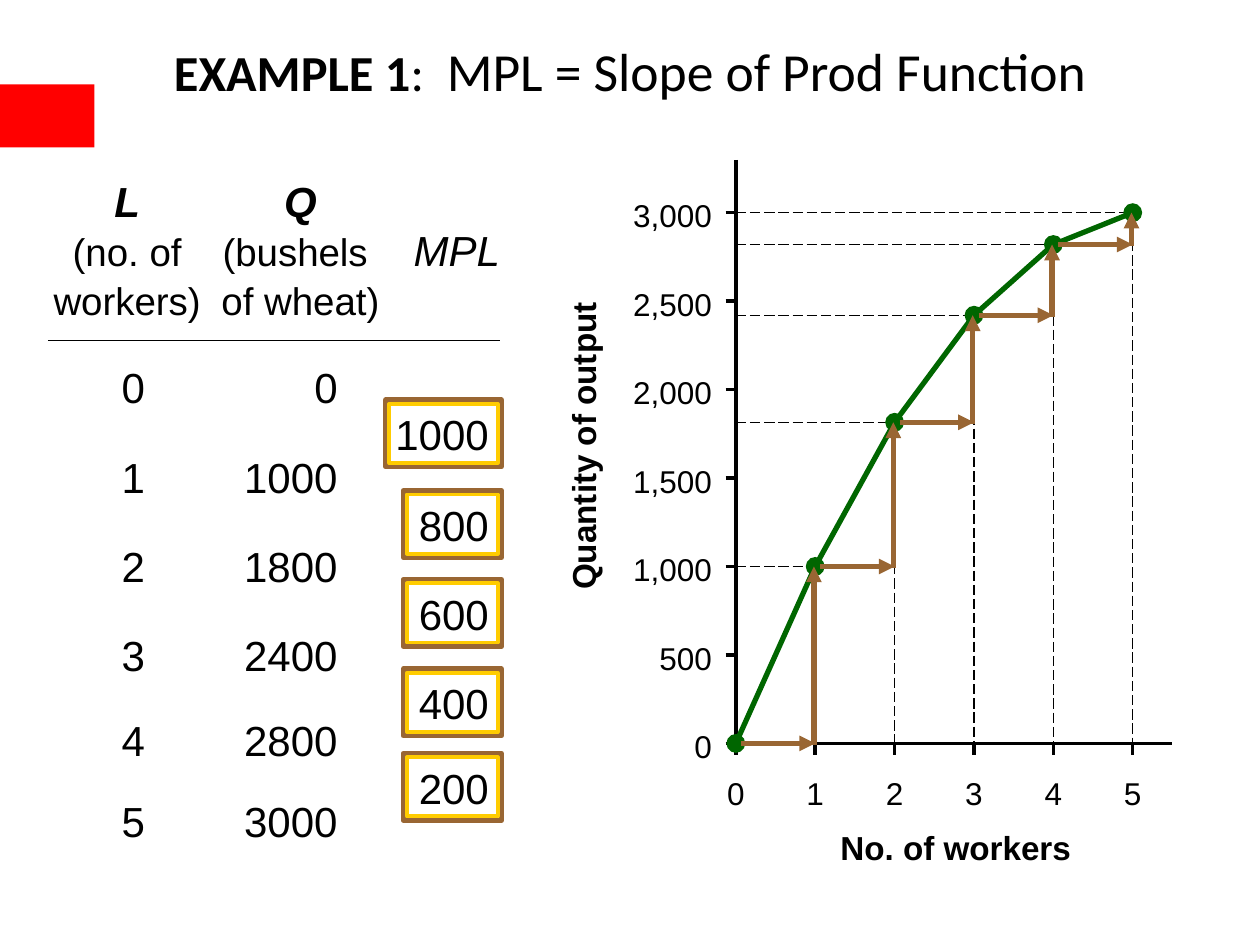
import dataclasses
import itertools

import lxml.etree
import pptx
import pptx.dml.color
import pptx.enum.dml
import pptx.enum.shapes
import pptx.enum.text
import pptx.oxml.ns
import pptx.slide
import pptx.util

BLACK = pptx.dml.color.RGBColor(0x00, 0x00, 0x00)
RED = pptx.dml.color.RGBColor(0xFF, 0x00, 0x00)
GREEN = pptx.dml.color.RGBColor(0x00, 0x66, 0x00)
BROWN = pptx.dml.color.RGBColor(0x99, 0x66, 0x33)
GOLD = pptx.dml.color.RGBColor(0xFF, 0xCC, 0x00)
ALIGN = pptx.enum.text.PP_ALIGN
SHAPE = pptx.enum.shapes.MSO_SHAPE

COLUMNS, ROWS = 100, 75
WORKERS = range(6)
OUTPUT = [0, 1000, 1800, 2400, 2800, 3000]
PLOTTED = [0, 1000, 1815, 2420, 2820, 3000]
ROW_EDGES = [26.8, 34.3, 41.2, 48.4, 55.4, 61.8, 68.2]
MPL_DROP = 3.8
AXIS_X, AXIS_Y = 58.4, 59
WORKER_STEP, OUTPUT_STEP = 6.3, 7.02


@dataclasses.dataclass
class Canvas:
    page: pptx.slide.Slide
    column: float
    row: float
    font_name: str = "Arial"

    def place(self, left, top, width, height):
        return [int(value * unit) for value, unit in
                zip((left, top, width, height), (self.column, self.row) * 2)]

    def fill_text(self, box, spans, align, margins=(0, 0, 0, 0), spacing=1.0):
        frame = box.text_frame
        sides = ("margin_left", "margin_top", "margin_right", "margin_bottom")
        layout = {
            "word_wrap": True,
            "auto_size": pptx.enum.text.MSO_AUTO_SIZE.NONE,
            "vertical_anchor": pptx.enum.text.MSO_ANCHOR.MIDDLE,
            **dict(zip(sides, map(pptx.util.Inches, margins))),
        }
        for name, value in layout.items():
            setattr(frame, name, value)
        para = frame.paragraphs[0]
        para.alignment = align
        para.line_spacing = spacing
        for text, size, formats in spans:
            for index, part in enumerate(text.split("\n")):
                if index:
                    para.add_line_break()
                if part:
                    span = para.add_run()
                    span.text = part
                    style = {"name": self.font_name, "size": pptx.util.Pt(size),
                             "bold": False, "italic": False, **formats}
                    for name, value in style.items():
                        setattr(span.font, name, value)
                    span.font.color.rgb = BLACK

    def title(self, area, spans):
        box = self.page.shapes.title
        box.left, box.top, box.width, box.height = self.place(*area)
        self.fill_text(box, spans, ALIGN.CENTER, (0.1, 0.05, 0.1, 0.05))

    def text(self, area, spans, align=ALIGN.CENTER, rotation=0, **layout):
        box = self.page.shapes.add_textbox(*self.place(*area))
        box.rotation = rotation
        self.fill_text(box, spans, align, **layout)

    def shape(self, kind, area, fill=None, line=None, weight=1):
        shape = self.page.shapes.add_shape(kind, *self.place(*area))
        shape.shadow.inherit = False
        if fill is None:
            shape.fill.background()
        else:
            shape.fill.solid()
            shape.fill.fore_color.rgb = fill
        if line is None:
            shape.line.fill.background()
        else:
            shape.line.color.rgb = line
            shape.line.width = pptx.util.Pt(weight)

    def line(self, start, end, color=BLACK, weight=0.75, dashed=False, arrow=False):
        line = self.page.shapes.add_connector(
            pptx.enum.shapes.MSO_CONNECTOR.STRAIGHT, *self.place(*start, *end))
        line.line.color.rgb = color
        line.line.width = pptx.util.Pt(weight)
        if dashed:
            line.line.dash_style = pptx.enum.dml.MSO_LINE.LONG_DASH
        qn = pptx.oxml.ns.qn
        properties = line.element.spPr
        if arrow:
            lxml.etree.SubElement(properties.find(qn("a:ln")), qn("a:tailEnd"), type="triangle")
        lxml.etree.SubElement(properties, qn("a:effectLst"))

    def dot(self, x, y):
        self.shape(SHAPE.OVAL, (x - 0.75, y - 0.75, 1.5, 1.5), fill=GREEN)


def worker_x(workers):
    return AXIS_X + WORKER_STEP * workers


def output_y(output):
    return AXIS_Y - OUTPUT_STEP * output / 500


def draw_axes(canvas):
    canvas.line((AXIS_X, 12.7), (AXIS_X, AXIS_Y), weight=2)
    canvas.line((AXIS_X, AXIS_Y), (93, AXIS_Y), weight=2)
    for output in range(0, 3001, 500):
        y = output_y(output)
        canvas.line((AXIS_X - 0.8, y), (AXIS_X, y), weight=2)
        canvas.text((48.5, y - 1.3, 8, 3), [(f"{output:,}", 18, {})], ALIGN.RIGHT)
    for workers in WORKERS:
        x = worker_x(workers)
        canvas.line((x, AXIS_Y + 0.9), (x, AXIS_Y), weight=2)
        canvas.text((x - 2, 61.4, 4, 3), [(str(workers), 18, {})])
    canvas.text((65.6, 65.6, 20.5, 3.2), [("No. of workers", 19, {"bold": True})])
    canvas.text((33.75, 33.8, 25, 3.2), [("Quantity of output", 19, {"bold": True})], rotation=270)


def draw_curve(canvas, points):
    for x, y in points[1:]:
        canvas.line((AXIS_X, y), (x, y), dashed=True)
        canvas.line((x, y), (x, AXIS_Y), dashed=True)
        canvas.dot(x, y)
    for start, end in itertools.pairwise(points):
        canvas.line(start, end, GREEN, 3)
    canvas.dot(*points[0])


def draw_steps(canvas, points):
    for (x, y), (next_x, next_y) in itertools.pairwise(points):
        canvas.line((x + 0.4, y), (next_x, y), BROWN, 3, arrow=True)
        canvas.line((next_x - 0.1, y + 0.1), (next_x - 0.1, next_y), BROWN, 3, arrow=True)


def draw_table(canvas):
    symbol = {"bold": True, "italic": True}
    headings = [
        (3.6, 13, [("L\n", 24, symbol), ("(no. of workers)", 22, {})]),
        (16.6, 14.5, [("Q\n", 24, symbol), ("(bushels \nof wheat)", 22, {})]),
        (31.2, 10.1, [("MPL", 24, {"italic": True})]),
    ]
    for left, width, spans in headings:
        canvas.text((left, 12.5, width, 14.4), spans, margins=(0, 0.05, 0, 0.05), spacing=1.05)
    canvas.line((3.8, 27), (39.7, 27))

    number = {"align": ALIGN.RIGHT, "margins": (0, 0.05, 0.25, 0.05), "spacing": 1.05}
    bands = list(itertools.pairwise(ROW_EDGES))
    for workers, output, (top, bottom) in zip(WORKERS, OUTPUT, bands):
        canvas.text((3.6, top, 13, bottom - top), [(str(workers), 24, {})],
                    margins=(0.1, 0.05, 0, 0.05), spacing=1.05)
        canvas.text((16.6, top, 12.7, bottom - top), [(str(output), 24, {})], **number)
    for (before, after), (top, bottom) in zip(itertools.pairwise(OUTPUT), bands):
        gain = str(after - before)
        canvas.text((31.2, top + MPL_DROP, 10.1, bottom - top), [(gain, 24, {})], **number)
        width = 9.2 if len(gain) == 4 else 7.8
        left, frame_top = 39.8 - width, (top + bottom) / 2 + MPL_DROP - 2.6
        for inset, color, weight in ((0, BROWN, 3), (0.3, GOLD, 2.25)):
            area = (left + inset, frame_top + inset, width - 2 * inset, 5.3 - 2 * inset)
            canvas.shape(SHAPE.RECTANGLE, area, line=color, weight=weight)


def main():
    deck = pptx.Presentation()
    deck.slide_width, deck.slide_height = pptx.util.Inches(10), pptx.util.Inches(7.5)
    page = deck.slides.add_slide(deck.slide_layouts.get_by_name("Title Only"))
    canvas = Canvas(page, deck.slide_width / COLUMNS, deck.slide_height / ROWS)
    calibri = {"name": "Calibri"}
    canvas.title((0, 2.4, 100, 6.3), [
        ("EXAMPLE 1", 28.8, {**calibri, "bold": True}),
        (":  ", 28.8, calibri),
        ("MPL = Slope of Prod Function", 30.6, calibri),
    ])
    canvas.shape(SHAPE.RECTANGLE, (0, 6.7, 7.5, 5), fill=RED)
    points = [(worker_x(workers), output_y(output)) for workers, output in zip(WORKERS, PLOTTED)]
    draw_axes(canvas)
    draw_curve(canvas, points)
    draw_table(canvas)
    draw_steps(canvas, points)
    deck.save("out.pptx")


if __name__ == "__main__":
    main()
